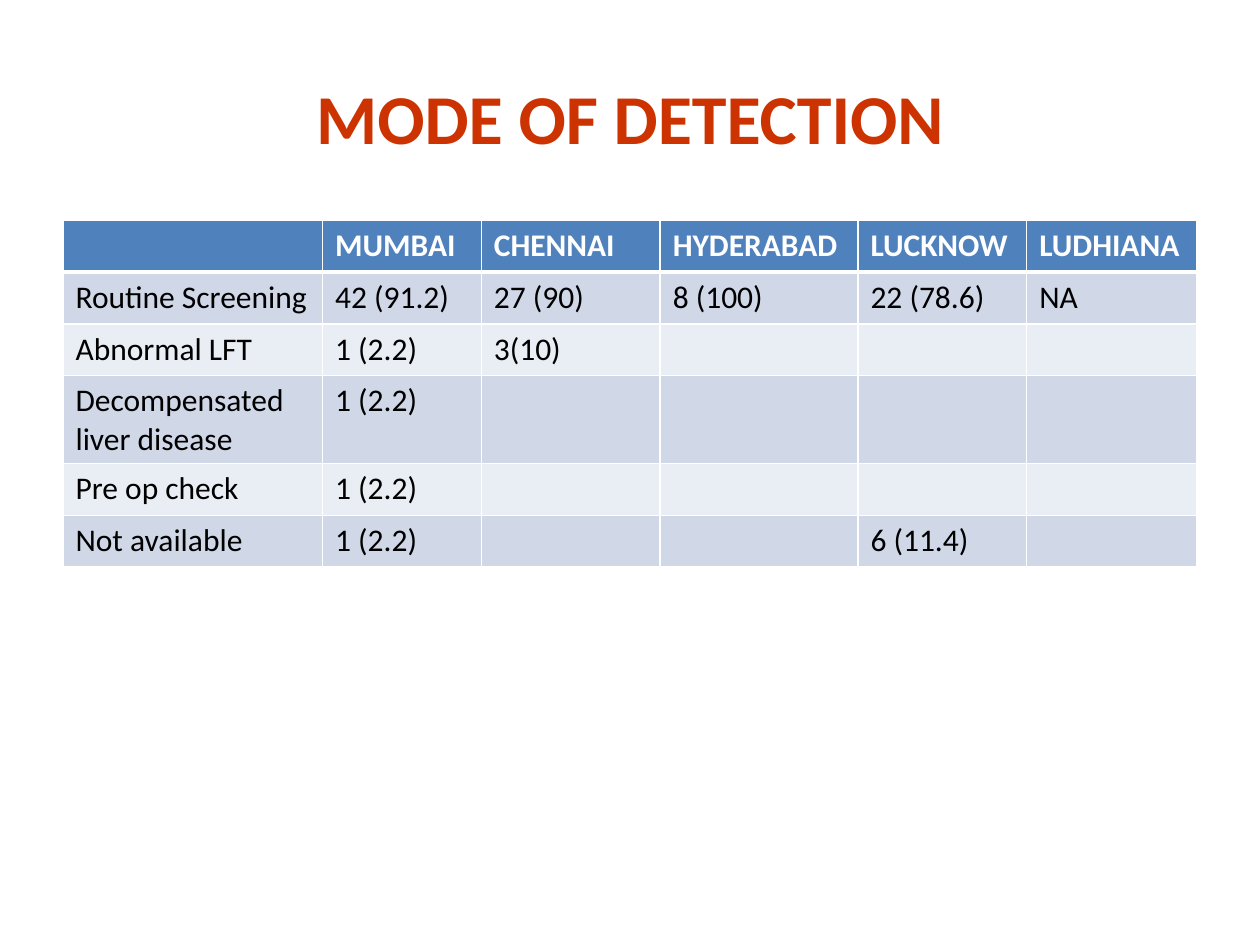
from typing import NamedTuple

from lxml import etree
from pptx import Presentation
from pptx.dml.color import RGBColor
from pptx.enum.text import MSO_ANCHOR, PP_ALIGN
from pptx.oxml.ns import qn
from pptx.util import Inches, Pt

LEFT, CENTER = PP_ALIGN.LEFT, PP_ALIGN.CENTER
MIDDLE = MSO_ANCHOR.MIDDLE

RED = RGBColor(0xCC, 0x33, 0x00)
BLUE = RGBColor(0x4F, 0x81, 0xBD)
DARK = RGBColor(0xD0, 0xD8, 0xE8)
LIGHT = RGBColor(0xE9, 0xED, 0xF4)
WHITE = RGBColor(0xFF, 0xFF, 0xFF)
BLACK = RGBColor(0x00, 0x00, 0x00)

FONT = "Calibri"
WIDTHS = (2.06, 1.26, 1.42, 1.57, 1.34, 1.35)
HEIGHT = 0.41


class Row(NamedTuple):
    label: str
    mumbai: str = ""
    chennai: str = ""
    hyderabad: str = ""
    lucknow: str = ""
    ludhiana: str = ""


ROWS = (
    Row("", "MUMBAI", "CHENNAI", "HYDERABAD", "LUCKNOW", "LUDHIANA"),
    Row("Routine Screening", "42 (91.2)", "27 (90)", "8 (100)", "22 (78.6)", "NA"),
    Row("Abnormal LFT", "1 (2.2)", "3(10)"),
    Row("Decompensated liver disease", "1 (2.2)"),
    Row("Pre op check", "1 (2.2)"),
    Row("Not available", "1 (2.2)", lucknow="6 (11.4)"),
)


def write(frame, text: str, *, size: int = 18, color: RGBColor = BLACK,
          bold: bool = False, align: PP_ALIGN = LEFT) -> None:
    frame.word_wrap = True
    para = frame.paragraphs[0]
    para.alignment = align
    para.font.size = Pt(size)
    if text:
        run = para.add_run()
        run.text = text
        font = run.font
        font.name, font.size, font.bold = FONT, Pt(size), bold
        font.color.rgb = color


def border(cell, top: int = 1, bottom: int = 1) -> None:
    """Draw white cell edges; call before the fill, which must follow them."""
    props = cell._tc.get_or_add_tcPr()
    for side, width in (("L", 1), ("R", 1), ("T", top), ("B", bottom)):
        line = etree.SubElement(props, qn(f"a:ln{side}"), w=str(Pt(width)))
        fill = etree.SubElement(line, qn("a:solidFill"))
        etree.SubElement(fill, qn("a:srgbClr"), val=str(WHITE))


def add_title(slide, text: str) -> None:
    box = slide.shapes.add_textbox(Inches(0.5), Inches(0.3), Inches(9), Inches(1.25))
    box.text_frame.vertical_anchor = MIDDLE
    write(box.text_frame, text, size=40, color=RED, bold=True, align=CENTER)


def add_grid(slide, rows: tuple[Row, ...]) -> None:
    table = slide.shapes.add_table(
        len(rows), len(WIDTHS), Inches(0.5), Inches(1.75),
        Inches(sum(WIDTHS)), Inches(HEIGHT * len(rows))).table
    for col, width in zip(table.columns, WIDTHS):
        col.width = Inches(width)
    for i, row in enumerate(rows):
        head = i == 0
        table.rows[i].height = Inches(HEIGHT)
        for j, text in enumerate(row):
            cell = table.cell(i, j)
            border(cell, top=3 if i == 1 else 1, bottom=3 if head else 1)
            cell.fill.solid()
            cell.fill.fore_color.rgb = BLUE if head else DARK if i % 2 else LIGHT
            write(cell.text_frame, text, color=WHITE if head else BLACK, bold=head)


def main() -> None:
    deck = Presentation()
    deck.slide_width, deck.slide_height = Inches(10), Inches(7.5)
    slide = deck.slides.add_slide(deck.slide_layouts[6])
    add_title(slide, "MODE OF DETECTION")
    add_grid(slide, ROWS)
    deck.save("out.pptx")


if __name__ == "__main__":
    main()
